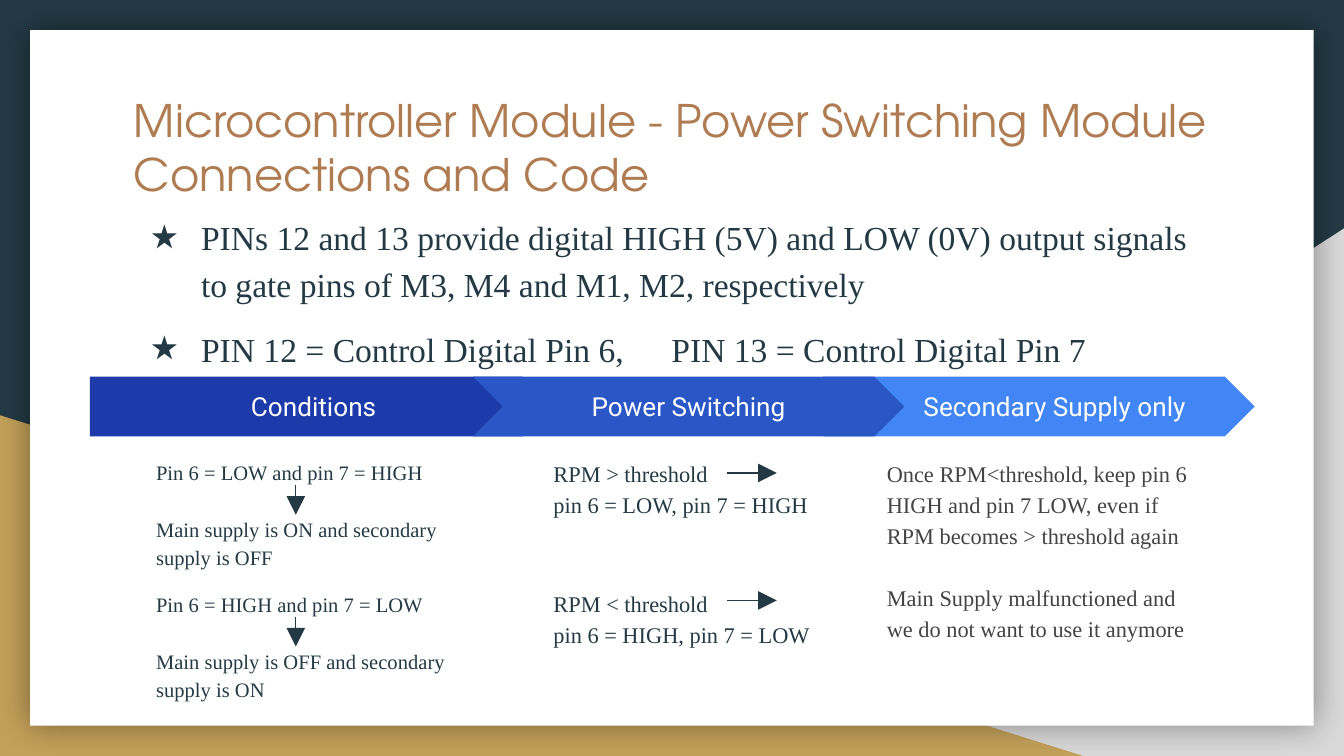
from lxml import etree
from pptx import Presentation
from pptx.dml.color import RGBColor
from pptx.enum import shapes, text
from pptx.oxml import ns
from pptx.util import Cm, Pt

NAVY, GOLD, GREY, WHITE = "233A44", "C4A15A", "D9D9D9", "FFFFFF"
SERIF = "Times New Roman"
INSET = 0.25
BANNER_TOP, BANNER_HEIGHT = 7.12, 1.13
DETAIL_TOP, DETAIL_HEIGHT = 8.38, 4.39

TITLE = "Microcontroller Module - Power Switching Module Connections and Code"
BULLETS = [
    "PINs 12 and 13 provide digital HIGH (5V) and LOW (0V) output signals "
    "to gate pins of M3, M4 and M1, M2, respectively",
    "PIN 12 = Control Digital Pin 6,\tPIN 13 = Control Digital Pin 7",
]
# From back to front; each line is (wording, points of space after it)
STEPS = [
    {"name": "Secondary Supply only", "shape": "CHEVRON", "fill": "4285F4",
     "banner": (15.56, 8.15), "shift": 0.6, "detail": (16.51, 6.3),
     "size": 12, "color": "434343",
     "lines": [("Once RPM<threshold, keep pin 6 HIGH and pin 7 LOW, even if "
                "RPM becomes > threshold again", 16.5),
               ("Main Supply malfunctioned and we do not want to use it anymore", 0)]},
    {"name": "Conditions", "shape": "PENTAGON", "fill": "1C3AA9",
     "banner": (1.7, 8.74), "shift": 0, "detail": (2.7, 6.65),
     "size": 11, "color": NAVY,
     "lines": [("Pin 6 = LOW and pin 7 = HIGH", 15.2),
               ("Main supply is ON and secondary supply is OFF", 10),
               ("Pin 6 = HIGH and pin 7 = LOW", 15.2),
               ("Main supply is OFF and secondary supply is ON", 0)]},
    {"name": "Power Switching", "shape": "CHEVRON", "fill": "2A56C6",
     "banner": (8.94, 8.15), "shift": 0, "detail": (10.21, 6.4),
     "size": 12, "color": NAVY,
     "lines": [("RPM > threshold", 0),
               ("pin 6 = LOW, pin 7 = HIGH", 36.5),
               ("RPM < threshold", 0),
               ("pin 6 = HIGH, pin 7 = LOW", 0)]},
]
ARROWS = [(5.59, 9.17, 5.59, 9.73), (13.74, 8.94, 14.68, 8.94),
          (13.74, 11.35, 14.68, 11.35), (5.59, 11.66, 5.59, 12.22)]


def rgb(color):
    return RGBColor.from_string(color)


def add_xml(parent, tag, **attributes):
    return etree.SubElement(parent, ns.qn(tag), attributes)


def add_shape(page, kind, area, fill):
    shape = page.shapes.add_shape(getattr(shapes.MSO_SHAPE, kind), *map(Cm, area))
    shape.fill.solid()
    shape.fill.fore_color.rgb = rgb(fill)
    shape.line.fill.background()
    shape.shadow.inherit = False
    return shape


def write(box, lines, size, font, color, anchor="TOP", **paragraph_format):
    """Fill a shape with (wording, space after) paragraphs."""
    frame = box.text_frame
    frame_format = {"word_wrap": True, "auto_size": text.MSO_AUTO_SIZE.NONE,
                    "vertical_anchor": getattr(text.MSO_ANCHOR, anchor)}
    for side in ("left", "top", "right", "bottom"):
        frame_format["margin_" + side] = Cm(INSET)
    for name, value in frame_format.items():
        setattr(frame, name, value)
    for index, (wording, after) in enumerate(lines):
        para = frame.paragraphs[0] if index == 0 else frame.add_paragraph()
        for name, value in {"alignment": text.PP_ALIGN.LEFT, "space_after": Pt(after),
                            **paragraph_format}.items():
            setattr(para, name, value)
        span = para.add_run()
        span.text = wording
        span.font.size, span.font.name = Pt(size), font
        span.font.color.rgb = rgb(color)


def add_backdrop(page):
    page.background.fill.solid()
    page.background.fill.fore_color.rgb = rgb(NAVY)
    right = add_shape(page, "RIGHT_TRIANGLE", (9.96, 4.32, 15.44, 9.97), GREY)
    right._element.spPr.xfrm.set("flipH", "1")
    add_shape(page, "RIGHT_TRIANGLE", (0, 7.85, 20.47, 6.44), GOLD)
    card = add_shape(page, "RECTANGLE", (0.57, 0.57, 24.26, 13.15), WHITE)
    effects = card._element.spPr.find(ns.qn("a:effectLst"))
    shadow = add_xml(effects, "a:outerShdw", blurRad=str(Pt(18)), dist="0",
                     algn="ctr", rotWithShape="0")
    black = add_xml(shadow, "a:srgbClr", val="000000")
    add_xml(black, "a:alpha", val="40000")


def add_title(page):
    title = page.shapes.title
    title.left, title.top, title.width, title.height = map(Cm, (2.28, 1.5, 20.84, 2.24))
    write(title, [(TITLE, 0)], 24, "TeX Gyre Adventor", "AF7B51")


def add_bullets(page):
    box = page.shapes.add_textbox(*map(Cm, (2.28, 3.74, 20.84, 3.38)))
    write(box, [(wording, 10) for wording in BULLETS], 18, SERIF, NAVY, line_spacing=1.15)
    for para in box.text_frame.paragraphs:
        properties = para._p.get_or_add_pPr()
        properties.set("marL", str(Cm(1.27)))
        properties.set("indent", str(Cm(-0.95)))
        color = add_xml(properties, "a:buClr")
        add_xml(color, "a:srgbClr", val=NAVY)
        add_xml(properties, "a:buFont", typeface=SERIF)
        add_xml(properties, "a:buChar", char="★")


def add_step(page, step):
    left, width = step["banner"]
    banner = add_shape(page, step["shape"], (left, BANNER_TOP, width, BANNER_HEIGHT),
                       step["fill"])
    write(banner, [(step["name"], 0)], 14, "Roboto", WHITE, "MIDDLE",
          alignment=text.PP_ALIGN.CENTER)
    banner.text_frame.margin_left = Cm(INSET + step["shift"])
    left, width = step["detail"]
    detail = page.shapes.add_textbox(*map(Cm, (left, DETAIL_TOP, width, DETAIL_HEIGHT)))
    write(detail, step["lines"], step["size"], SERIF, step["color"], line_spacing=1.15)


def add_arrow(page, ends):
    arrow = page.shapes.add_connector(shapes.MSO_CONNECTOR.STRAIGHT, *map(Cm, ends))
    arrow.line.width = Pt(0.75)
    arrow.line.color.rgb = rgb(NAVY)
    add_xml(arrow.line._get_or_add_ln(), "a:tailEnd", type="triangle", w="lg", len="lg")
    add_xml(arrow._element.spPr, "a:effectLst")


def main():
    deck = Presentation()
    deck.slide_width, deck.slide_height = Cm(25.4), Cm(14.29)
    page = deck.slides.add_slide(deck.slide_layouts[5])
    add_backdrop(page)
    add_title(page)
    # Bring the title in front of the backdrop
    page.shapes._spTree.append(page.shapes.title._element)
    add_bullets(page)
    for step in STEPS:
        add_step(page, step)
    for ends in ARROWS:
        add_arrow(page, ends)
    deck.save("out.pptx")


if __name__ == "__main__":
    main()
